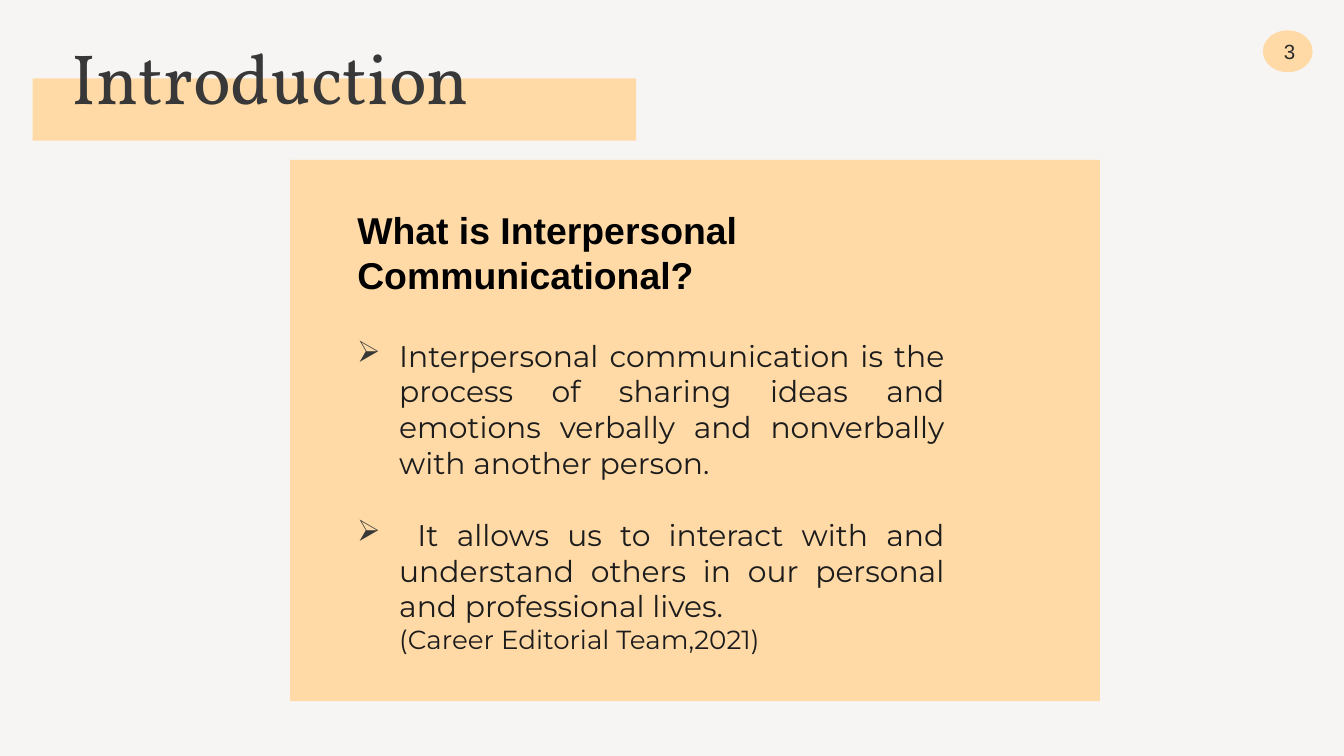
from dataclasses import dataclass

from lxml.etree import SubElement
from pptx import Presentation
from pptx.dml.color import RGBColor
from pptx.enum.shapes import MSO_SHAPE as Shape
from pptx.enum.text import MSO_ANCHOR as Anchor, PP_ALIGN as Align
from pptx.oxml.ns import qn
from pptx.util import Pt


@dataclass(frozen=True)
class Theme:
    paper: RGBColor = RGBColor.from_string("F7F5F3")
    peach: RGBColor = RGBColor.from_string("FFDAA7")
    title: RGBColor = RGBColor.from_string("383838")
    heading: RGBColor = RGBColor.from_string("000000")
    body: RGBColor = RGBColor.from_string("1C1C1C")
    number: RGBColor = RGBColor.from_string("2A2A2A")
    title_size: int = 38
    heading_size: int = 20
    body_size: int = 16
    source_size: int = 14
    number_size: int = 11


theme = Theme()
INDENT = Pt(22.5)


def set_text(para, text, font, size, color, bold=False):
    span = para.add_run()
    span.text = text
    span.font.color.rgb = color
    for name, value in {"name": font, "size": Pt(size), "bold": bold}.items():
        setattr(span.font, name, value)


def add_text_box(page, left, top, width, height, inset):
    """Add a wrapping text box and return its text frame."""
    frame = page.shapes.add_textbox(Pt(left), Pt(top), Pt(width), Pt(height)).text_frame
    frame.word_wrap = True
    for side in ("left", "top", "right", "bottom"):
        setattr(frame, f"margin_{side}", Pt(inset))
    return frame


deck = Presentation()
deck.slide_width, deck.slide_height = Pt(720), Pt(405)
page = deck.slides.add_slide(deck.slide_layouts[6])
page.background.fill.solid()
page.background.fill.fore_color.rgb = theme.paper

# Panel, title band and page number badge
for kind, left, top, width, height in (
    (Shape.RECTANGLE, 155.5, 85.7, 433.8, 289.9),
    (Shape.RECTANGLE, 17.5, 42, 323.3, 33.3),
    (Shape.OVAL, 677.5, 17.3, 24.7, 20.4),
):
    shape = page.shapes.add_shape(kind, Pt(left), Pt(top), Pt(width), Pt(height))
    shape.shadow.inherit = False
    shape.fill.solid()
    shape.fill.fore_color.rgb = theme.peach
    shape.line.fill.background()
badge = shape
badge.line.color.rgb = theme.peach
badge.line.width = Pt(2)

number = badge.text_frame
for name, value in {
    "margin_left": Pt(2), "margin_right": 0, "margin_top": 0, "margin_bottom": 0,
    "vertical_anchor": Anchor.MIDDLE, "word_wrap": False,
}.items():
    setattr(number, name, value)
number.paragraphs[0].alignment = Align.CENTER
set_text(number.paragraphs[0], "3", "Arial", theme.number_size, theme.number)

title = add_text_box(page, 31, 10.8, 265.7, 74.9, 7.2)
set_text(title.paragraphs[0], "Introduction", "Vollkorn", theme.title_size, theme.title)

heading = add_text_box(page, 184.3, 107.3, 346.3, 55.4, 7.2)
heading.margin_top = heading.margin_bottom = Pt(3.6)
set_text(heading.paragraphs[0], "What is Interpersonal Communicational?",
         "Arial", theme.heading_size, theme.heading, bold=True)

body = add_text_box(page, 184.3, 173.5, 329, 146.9, 7.2)
for text, size, bullet, gap in (
    ("Interpersonal communication is the process of sharing ideas and emotions "
     "verbally and nonverbally with another person.", theme.body_size, "➢", 0),
    (" It allows us to interact with and understand others in our personal "
     "and professional lives.", theme.body_size, "➢", 19.2),
    ("(Career Editorial Team,2021)", theme.source_size, None, 0),
):
    para = body.paragraphs[0] if not body.text else body.add_paragraph()
    para.alignment = Align.JUSTIFY
    para.space_before = Pt(gap)
    set_text(para, text, "Montserrat", size, theme.body)
    properties = para._p.get_or_add_pPr()
    properties.set("marL", str(INDENT))
    if bullet:
        properties.set("indent", str(-INDENT))
        color = SubElement(properties, qn("a:buClr"))
        SubElement(color, qn("a:srgbClr"), val=str(theme.title))
        SubElement(properties, qn("a:buChar"), char=bullet)

deck.save("out.pptx")
